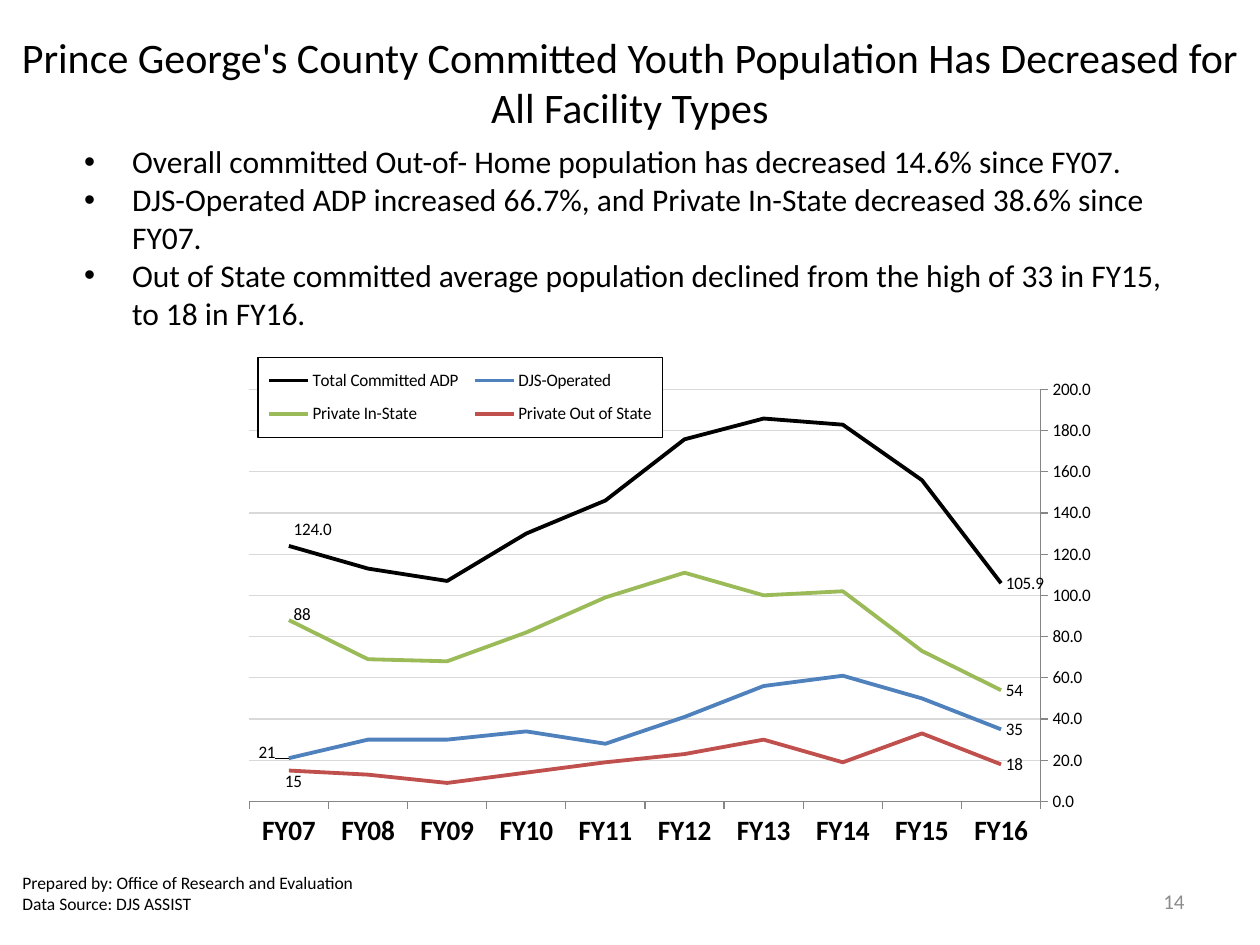
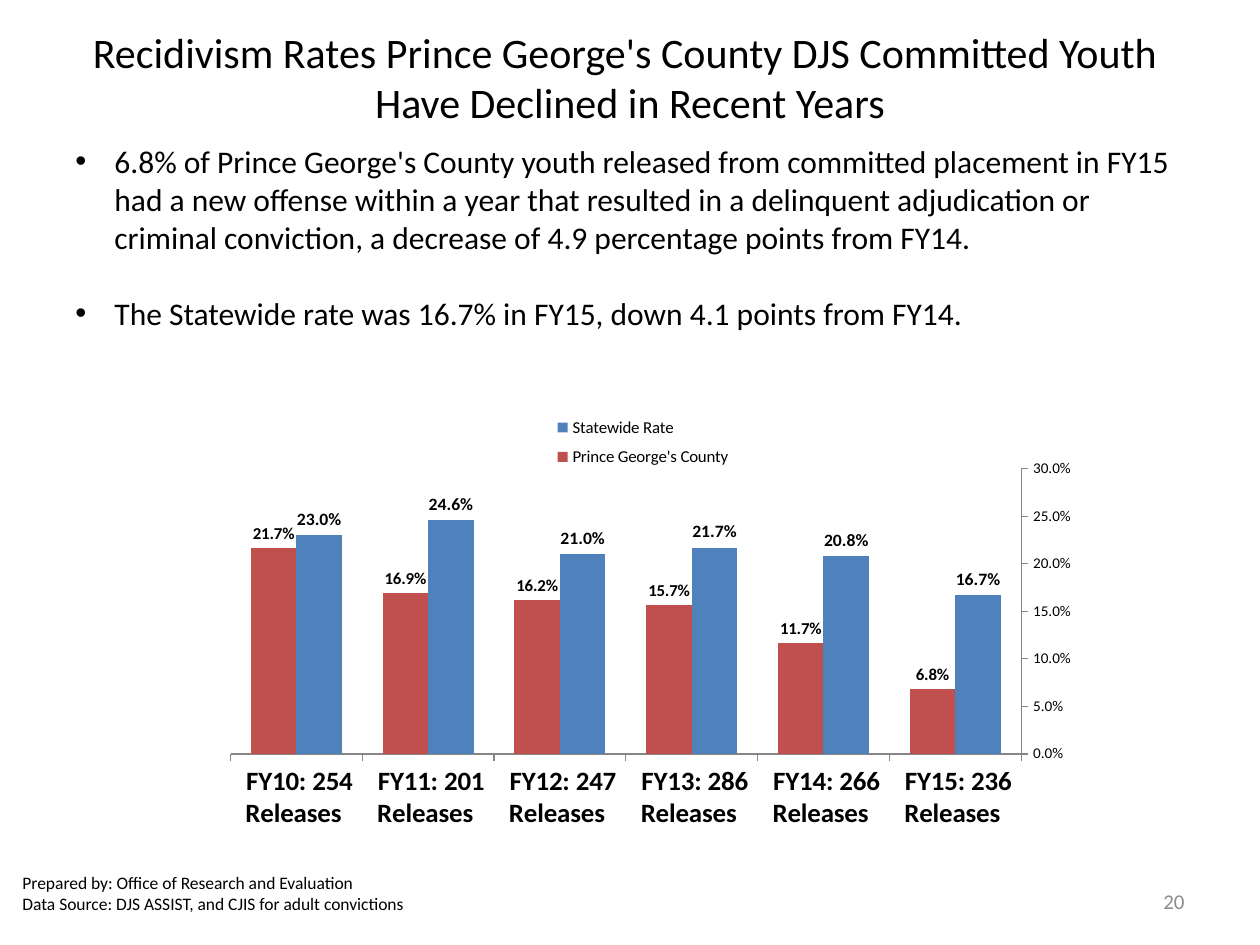
from pptx import Presentation
from pptx.chart.data import CategoryChartData
from pptx.dml.color import RGBColor
from pptx.enum.chart import (XL_AXIS_CROSSES, XL_CHART_TYPE, XL_LABEL_POSITION,
                             XL_LEGEND_POSITION, XL_TICK_MARK)
from pptx.enum.text import MSO_ANCHOR, PP_ALIGN
from pptx.oxml import parse_xml
from pptx.oxml.ns import nsdecls, qn
from pptx.util import Inches, Pt

COLORS = {
    "text": "000000",
    "number": "8C8C8C",
    "grid": "D9D9D9",
    "axis": "868686",
    "blue": "4F81BD",
    "green": "9BBB59",
    "red": "C0504D",
    "white": "FFFFFF",
}
FONT = "Calibri"
PREPARED_BY = "Prepared by: Office of Research and Evaluation"


def rgb(name):
    return RGBColor.from_string(COLORS[name])


def set_font(font, size, color="text", bold=False):
    font.name = FONT
    font.size = Pt(size)
    font.bold = bold
    font.color.rgb = rgb(color)


def manual_layout(x, y, w=None, h=None, inner=False, offset=False):
    target = '<c:layoutTarget val="inner"/>' if inner else ""
    modes = "" if offset else '<c:xMode val="edge"/><c:yMode val="edge"/>'
    size = f'<c:w val="{w}"/><c:h val="{h}"/>' if w else ""
    return (f'<c:layout {nsdecls("c")}><c:manualLayout>{target}{modes}'
            f'<c:x val="{x}"/><c:y val="{y}"/>{size}</c:manualLayout></c:layout>')


def place(element, index, layout):
    for old in element.findall(qn("c:layout")):
        element.remove(old)
    element.insert(index, parse_xml(layout))


class Deck:
    def __init__(self):
        self.prs = Presentation()
        self.prs.slide_width = Inches(10)
        self.prs.slide_height = Inches(7.5)
        self.slide = None

    def add_slide(self, title, title_height, number, source, source_width):
        self.slide = self.prs.slides.add_slide(self.prs.slide_layouts[6])
        self.text((0, 0.3, 10, title_height), [title], 24, align=PP_ALIGN.CENTER)
        self.text((7.17, 6.95, 2.33, 0.4), [number], 12, "number", PP_ALIGN.RIGHT)
        self.text((0.08, 6.83, source_width, 0.52), [PREPARED_BY, source], 10)

    def text(self, box, lines, size, color="text", align=PP_ALIGN.LEFT):
        sp = self.slide.shapes.add_textbox(*map(Inches, box))
        tf = sp.text_frame
        tf.word_wrap = True
        tf.vertical_anchor = MSO_ANCHOR.MIDDLE
        for i, line in enumerate(lines):
            p = tf.paragraphs[0] if i == 0 else tf.add_paragraph()
            p.text = line
            p.alignment = align
            set_font(p.font, size, color)
        return tf

    def bullets(self, box, lines, indent, gap=0):
        tf = self.text(box, lines, 18)
        for i, p in enumerate(tf.paragraphs):
            if i:
                p.space_before = Pt(gap)
            pPr = p._p.get_or_add_pPr()
            pPr.set("marL", str(Inches(indent)))
            pPr.set("indent", str(-Inches(indent)))
            bullet = [f'<a:buFont {nsdecls("a")} typeface="Arial"/>',
                      f'<a:buChar {nsdecls("a")} char="•"/>']
            at = len(pPr) - len(pPr.findall(qn("a:defRPr")))
            for step, xml in enumerate(bullet):
                pPr.insert(at + step, parse_xml(xml))

    def chart(self, kind, box, cats, series, plot, legend, scale, fmt, value_size=10):
        data = CategoryChartData()
        data.categories = cats
        for name, values in series:
            data.add_series(name, values)
        chart = self.slide.shapes.add_chart(kind, *map(Inches, box), data).chart
        chart.has_title = False
        set_font(chart.font, 10)
        place(chart._chartSpace.chart.plotArea, 0, manual_layout(*plot, inner=True))

        chart.has_legend = True
        chart.legend.position = XL_LEGEND_POSITION.RIGHT
        chart.legend.include_in_layout = False
        place(chart.legend._element, 1, manual_layout(*legend))

        cat_axis, val_axis = chart.category_axis, chart.value_axis
        cat_axis.reverse_order = True
        cat_axis.crosses = XL_AXIS_CROSSES.MAXIMUM
        val_axis.minimum_scale = 0
        val_axis.maximum_scale, val_axis.major_unit = scale
        val_axis.has_major_gridlines = False
        val_axis.tick_labels.number_format = fmt
        val_axis.tick_labels.number_format_is_linked = False
        for axis, size, bold in ((cat_axis, 16, True), (val_axis, value_size, False)):
            axis.major_tick_mark = XL_TICK_MARK.OUTSIDE
            axis.minor_tick_mark = XL_TICK_MARK.NONE
            axis.format.line.color.rgb = rgb("axis")
            axis.format.line.width = Pt(0.75)
            set_font(axis.tick_labels.font, size, bold=bold)
        return chart

    def labels(self, series, fmt, size=10, bold=False):
        labels = series.data_labels
        labels.show_value = True
        labels.number_format = fmt
        labels.number_format_is_linked = False
        set_font(labels.font, size, bold=bold)
        return labels

    def end_labels(self, series, fmt, last, offset):
        labels = self.labels(series, fmt)
        labels.position = XL_LABEL_POSITION.RIGHT
        hidden = [f'<c:dLbl {nsdecls("c")}><c:idx val="{i}"/><c:delete val="1"/></c:dLbl>'
                  for i in range(1, last)]
        flags = "".join(f'<c:show{flag} val="{int(flag == "Val")}"/>' for flag in
                        ("LegendKey", "Val", "CatName", "SerName", "Percent", "BubbleSize"))
        moved = (f'<c:dLbl {nsdecls("c")}><c:idx val="{last}"/>'
                 f'{manual_layout(*offset, offset=True)}'
                 f'<c:numFmt formatCode="{fmt}" sourceLinked="0"/>'
                 f'<c:dLblPos val="r"/>{flags}</c:dLbl>')
        for i, xml in enumerate(hidden + [moved]):
            labels._element.insert(i, parse_xml(xml))

    def legend_box(self, chart):
        chart.legend.include_in_layout = True
        chart.legend._element.find(qn("c:overlay")).addnext(parse_xml(
            f'<c:spPr {nsdecls("c", "a")}>'
            f'<a:solidFill><a:srgbClr val="{COLORS["white"]}"/></a:solidFill>'
            f'<a:ln w="{Pt(0.75)}"><a:solidFill><a:srgbClr val="{COLORS["text"]}"/>'
            '</a:solidFill></a:ln></c:spPr>'))


def population_slide(deck):
    deck.add_slide("Prince George's County Committed Youth Population Has Decreased for "
                   "All Facility Types", 0.7, "14", "Data Source: DJS ASSIST", 2.92)
    deck.bullets((0.57, 0.92, 9.01, 1.92), [
        "Overall committed Out-of- Home population has decreased 14.6% since FY07.",
        "DJS-Operated ADP increased 66.7%, and Private In-State decreased 38.6% since FY07.",
        "Out of State committed average population declined from the high of 33 in FY15, "
        "to 18 in FY16.",
    ], 0.38)
    years = [f"FY{year:02}" for year in range(16, 6, -1)]
    facilities = [
        ("Total Committed ADP",
         (105.9, 155.9, 182.8, 185.8, 175.7, 146, 130, 107, 113, 124),
         "text", "0.0", (0, -0.03)),
        ("DJS-Operated", (35, 50, 61, 56, 41, 28, 34, 30, 30, 21),
         "blue", "0", (-0.04, -0.01)),
        ("Private In-State", (54, 73, 102, 100, 111, 99, 82, 68, 69, 88),
         "green", "0", (0, -0.01)),
        ("Private Out of State", (18, 33, 19, 30, 23, 19, 14, 9, 13, 15),
         "red", "0", (-0.01, 0.02)),
    ]
    chart = deck.chart(XL_CHART_TYPE.LINE, (1.49, 2.58, 7.17, 4.25), years,
                       [facility[:2] for facility in facilities],
                       (0.07, 0.12, 0.9, 0.77), (0.08, 0.06, 0.46, 0.15),
                       (200, 20), "0.0")
    deck.legend_box(chart)
    grid = chart.value_axis.major_gridlines.format.line
    grid.color.rgb = rgb("grid")
    grid.width = Pt(0.75)
    for series, (_, _, color, fmt, offset) in zip(chart.plots[0].series, facilities):
        series.smooth = False
        series.format.line.color.rgb = rgb(color)
        series.format.line.width = Pt(2.25)
        deck.end_labels(series, fmt, len(years) - 1, offset)


def recidivism_slide(deck):
    deck.add_slide("Recidivism Rates Prince George's County DJS Committed Youth \v"
                   "Have Declined in Recent Years", 0.62, "20",
                   "Data Source: DJS ASSIST, and CJIS for adult convictions", 3.42)
    deck.bullets((0.5, 1.17, 9.08, 1.42), [
        "6.8% of Prince George's County youth released from committed placement in FY15 "
        "had a new offense within a year that resulted in a delinquent adjudication or "
        "criminal conviction, a decrease of 4.9 percentage points from FY14.",
        "The Statewide rate was 16.7% in FY15, down 4.1 points from FY14.",
    ], 0.31, gap=22)
    releases = (236, 266, 286, 247, 201, 254)
    cats = [f" FY{15 - i}: {count} Releases " for i, count in enumerate(releases)]
    rates = [
        ("Statewide Rate", (0.167, 0.208, 0.217, 0.21, 0.246, 0.23), "blue", 10.5),
        ("Prince George's County", (0.068, 0.117, 0.157, 0.162, 0.169, 0.217), "red", 10),
    ]
    chart = deck.chart(XL_CHART_TYPE.COLUMN_CLUSTERED, (1.42, 3.17, 7.08, 3.42), cats,
                       [rate[:2] for rate in rates],
                       (0.06, 0.17, 0.92, 0.7), (0.42, 0.02, 0.24, 0.17),
                       (0.3, 0.05), "0.0%", value_size=9)
    plot = chart.plots[0]
    plot.vary_by_categories = False
    plot.gap_width = 89
    plot.overlap = 0
    for series, (_, _, color, size) in zip(plot.series, rates):
        series.format.fill.solid()
        series.format.fill.fore_color.rgb = rgb(color)
        labels = deck.labels(series, "0.0%", size, bold=True)
        labels.position = XL_LABEL_POSITION.OUTSIDE_END


def main():
    deck = Deck()
    population_slide(deck)
    recidivism_slide(deck)
    deck.prs.save("out.pptx")


if __name__ == "__main__":
    main()
